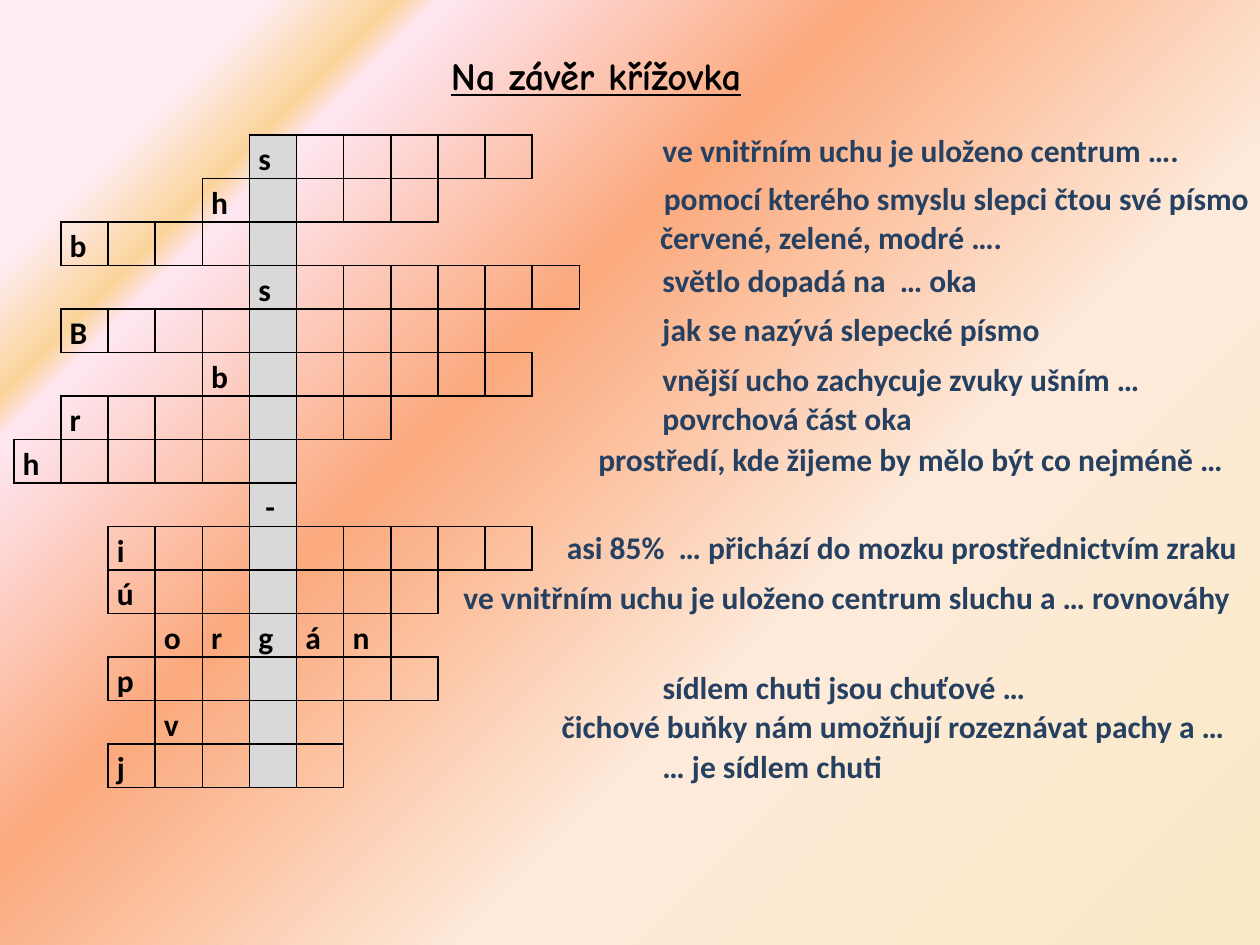
from pptx import Presentation
from pptx import util as u
from pptx.dml.color import RGBColor
from pptx.enum import text
from pptx.oxml import parse_xml
from pptx.oxml.ns import nsdecls, qn

INK, CLUE, KEY = "000000", "254061", "D9D9D9"
COLS, KEYCOL = 12, 5

# first column, last column, letters shown from the first column on
WORDS = [
    (5, 10, "s"), (4, 8, "h"), (1, 5, "b"), (5, 11, "s"), (1, 9, "B"),
    (4, 10, "b"), (1, 7, "r"), (0, 5, "h"), (5, 5, [" -"]), (2, 10, "i"),
    (2, 8, "ú"), (3, 7, "orgán"), (2, 8, "p"), (3, 6, "v"), (2, 6, "j"),
]

# left, top, width (None: up to the slide's right edge), wording
CLUES = [
    (5.16, 0.99, None, "ve vnitřním uchu je uloženo centrum …."),
    (5.17, 1.37, 5.2, "pomocí kterého smyslu slepci čtou své písmo"),
    (5.14, 1.68, 4.8, "červené, zelené, modré …."),
    (5.16, 2.02, None, "světlo dopadá na  … oka"),
    (5.16, 2.41, None, "jak se nazývá slepecké písmo"),
    (5.16, 2.81, None, "vnější ucho zachycuje zvuky ušním …"),
    (5.16, 3.12, None, "povrchová část oka"),
    (4.65, 3.44, None, "prostředí, kde žijeme by mělo být co nejméně …"),
    (4.4, 4.14, None, "asi 85%  … přichází do mozku prostřednictvím zraku"),
    (3.58, 4.54, None, "ve vnitřním uchu je uloženo centrum sluchu a … rovnováhy"),
    (5.16, 5.25, 3.22, "sídlem chuti jsou chuťové …"),
    (4.36, 5.56, None, "čichové buňky nám umožňují rozeznávat pachy a …"),
    (5.16, 5.88, 1.96, "… je sídlem chuti"),
]

STOPS = [(2, "FBEAC7"), (36, "FDEADA"), (61, "FBA97D"),
         (80, "FEE7F2"), (82, "FBD49C"), (88, "FEEDF5")]


def rgb(code):
    return RGBColor.from_string(code)


def used(row, col):
    """Tell whether a square belongs to a word."""
    return 0 <= row < len(WORDS) and WORDS[row][0] <= col <= WORDS[row][1]


class Deck:
    font, head, size = "Calibri", "Comic Neue", 18

    def __init__(self):
        self.prs = Presentation()
        self.prs.slide_width, self.prs.slide_height = u.Inches(10), u.Inches(7.5)
        self.slide = self.prs.slides.add_slide(self.prs.slide_layouts[5])

    def back(self, stops):
        """Fill the background with a gradient spreading from the lower right."""
        self.slide.background.fill.gradient()
        grad = next(self.slide.background._cSld.iter(qn("a:gradFill")))
        for part in list(grad):
            grad.remove(part)
        marks = "".join(f'<a:gs pos="{pos * 1000}"><a:srgbClr val="{code}"/></a:gs>'
                        for pos, code in stops)
        grad.append(parse_xml(f'<a:gsLst {nsdecls("a")}>{marks}</a:gsLst>'))
        grad.append(parse_xml(f'<a:path {nsdecls("a")} path="circle">'
                              '<a:fillToRect l="100000" t="100000"/></a:path>'))

    def run(self, para, words, color, font=None, size=None):
        run = para.add_run()
        run.text = words
        run.font.name, run.font.size = font or self.font, u.Pt(size or self.size)
        run.font.bold, run.font.color.rgb = True, rgb(color)
        return run

    def title(self, left, top, width, height, words):
        box = self.slide.shapes.title
        box.left, box.top = u.Inches(left), u.Inches(top)
        box.width, box.height = u.Inches(width), u.Inches(height)
        frame = box.text_frame
        frame.vertical_anchor = text.MSO_ANCHOR.TOP
        frame.auto_size = text.MSO_AUTO_SIZE.SHAPE_TO_FIT_TEXT
        para = frame.paragraphs[0]
        para.alignment = text.PP_ALIGN.CENTER
        self.run(para, words, INK, self.head, 22).font.underline = True

    def clue(self, left, top, width, words):
        box = self.slide.shapes.add_textbox(
            u.Inches(left), u.Inches(top), u.Inches(width or 10 - left), u.Inches(0.4))
        box.text_frame.word_wrap = True
        box.text_frame.auto_size = text.MSO_AUTO_SIZE.SHAPE_TO_FIT_TEXT
        self.run(box.text_frame.paragraphs[0], words, CLUE)

    def edge(self, cell, side, drawn):
        paint = (f'<a:solidFill><a:srgbClr val="{INK}"/></a:solidFill>'
                 if drawn else "<a:noFill/>")
        cell._tc.get_or_add_tcPr().append(parse_xml(
            f'<a:ln{side} {nsdecls("a")} w="12700">{paint}</a:ln{side}>'))

    def square(self, cell, row, col):
        """Style one square; an edge is drawn where a word lies on either side."""
        cell.margin_left = cell.margin_right = u.Inches(0.07)
        cell.margin_top = cell.margin_bottom = 0
        here = used(row, col)
        for side, down, over in (("L", 0, -1), ("R", 0, 1), ("T", -1, 0), ("B", 1, 0)):
            self.edge(cell, side, here or used(row + down, col + over))
        if col == KEYCOL:
            cell.fill.solid()
            cell.fill.fore_color.rgb = rgb(KEY)
        else:
            cell.fill.background()
        first, _, letters = WORDS[row]
        if 0 <= col - first < len(letters):
            para = cell.text_frame.paragraphs[0]
            para.line_spacing = 1.15
            self.run(para, letters[col - first], INK)

    def puzzle(self, left, top, width, height):
        table = self.slide.shapes.add_table(
            len(WORDS), COLS, u.Inches(left), u.Inches(top),
            u.Inches(width), u.Inches(height)).table
        table.first_row = table.horz_banding = False
        for row in range(len(WORDS)):
            for col in range(COLS):
                self.square(table.cell(row, col), row, col)


def main():
    deck = Deck()
    deck.back(STOPS)
    deck.puzzle(0.11, 1.07, 4.49, 5.17)
    deck.title(1.54, 0.36, 6.38, 0.47, "Na závěr křížovka")
    for clue in CLUES:
        deck.clue(*clue)
    deck.prs.save("out.pptx")


if __name__ == "__main__":
    main()
